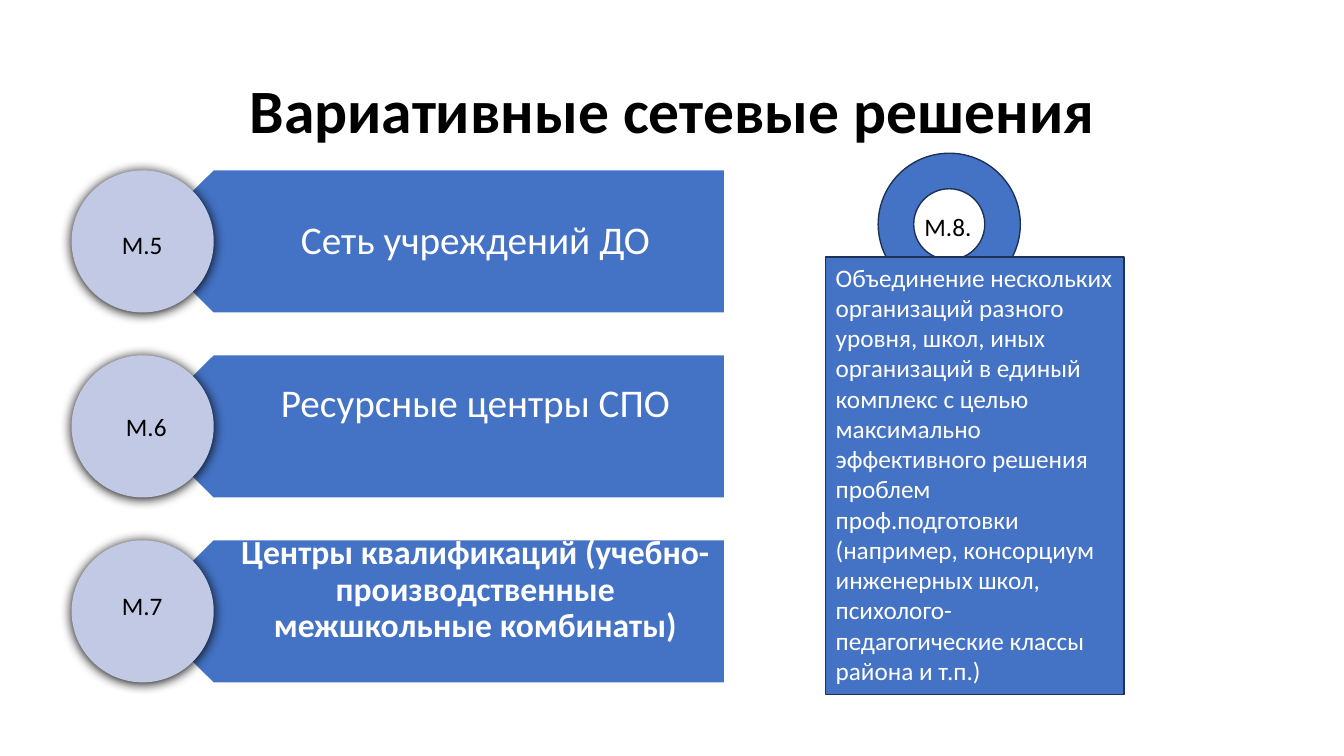
from lxml.etree import SubElement
from pptx import Presentation
from pptx.dml.color import RGBColor
from pptx.enum.shapes import MSO_SHAPE
from pptx.enum.text import MSO_ANCHOR, MSO_AUTO_SIZE, PP_ALIGN
from pptx.oxml.ns import qn
from pptx.util import Inches, Pt

COLORS = {
    "blue": "4472C4",
    "navy": "1E3256",
    "lavender": "C1C9E4",
    "white": "FFFFFF",
    "black": "000000",
}
FONT = "Calibri"
CIRCLE = 1.41
ROW_STEP = 1.835


def rgb(name):
    return RGBColor.from_string(COLORS[name])


class NetworkSlide:
    def __init__(self, presentation):
        self.slide = presentation.slides.add_slide(presentation.slide_layouts[5])
        self.shapes = self.slide.shapes

    def add_text(self, frame, text, size, color, bold=False, align=PP_ALIGN.LEFT, spacing=1.0):
        paragraph = frame.paragraphs[0]
        paragraph.alignment = align
        paragraph.line_spacing = spacing
        run = paragraph.add_run()
        run.text = text
        run.font.name = FONT
        run.font.size = Pt(size)
        run.font.bold = bold
        run.font.color.rgb = rgb(color)

    def paint(self, shape, fill, line=None):
        shape.shadow.inherit = False
        shape.fill.solid()
        shape.fill.fore_color.rgb = rgb(fill)
        if line:
            shape.line.color.rgb = rgb(line)
            shape.line.width = Pt(1)
        else:
            shape.line.fill.background()

    def title(self, text):
        heading = self.shapes.title
        heading.left, heading.top = Inches(0.92), Inches(0.4)
        heading.width, heading.height = Inches(11.5), Inches(1.45)
        heading.text_frame.vertical_anchor = MSO_ANCHOR.MIDDLE
        self.add_text(heading.text_frame, text, 44, "black", True, PP_ALIGN.CENTER, 0.9)

    def shape(self, kind, left, top, width, height, fill, line=None):
        shape = self.shapes.add_shape(
            kind, Inches(left), Inches(top), Inches(width), Inches(height))
        self.paint(shape, fill, line)
        return shape

    def banner(self, top, text, size, bold, bottom_inset):
        """Bar whose left end is a point hidden behind the circle."""
        tip, shoulder, right = 1.41, 2.12, 7.18
        bottom = top + CIRCLE
        outline = [(shoulder, bottom), (tip, top + CIRCLE / 2), (shoulder, top), (right, top)]
        builder = self.shapes.build_freeform(Inches(right), Inches(bottom))
        builder.add_line_segments([(Inches(x), Inches(y)) for x, y in outline], close=True)
        bar = builder.convert_to_shape()
        self.paint(bar, "blue")
        frame = bar.text_frame
        frame.word_wrap = True
        frame.vertical_anchor = MSO_ANCHOR.MIDDLE
        frame.margin_left, frame.margin_right = Inches(0.98), Inches(0.14)
        frame.margin_top, frame.margin_bottom = 0, Inches(bottom_inset)
        self.add_text(frame, text, size, "white", bold, PP_ALIGN.CENTER, 0.9)

    def circle(self, top):
        disc = self.shape(MSO_SHAPE.OVAL, 0.71, top, CIRCLE, CIRCLE, "lavender")
        effects = disc.element.spPr.find(qn("a:effectLst"))
        shadow = SubElement(effects, qn("a:outerShdw"), blurRad=str(Pt(8.5)),
                            dist=str(Pt(1)), dir="5400000", algn="ctr", rotWithShape="0")
        SubElement(shadow, qn("a:srgbClr"), val=COLORS["black"])

    def label(self, left, top, width, text):
        box = self.shapes.add_textbox(Inches(left), Inches(top), Inches(width), Inches(0.4))
        box.text_frame.word_wrap = True
        box.text_frame.auto_size = MSO_AUTO_SIZE.SHAPE_TO_FIT_TEXT
        self.add_text(box.text_frame, text, 18, "black")

    def panel(self, text):
        card = self.shape(MSO_SHAPE.RECTANGLE, 8.19, 2.55, 2.96, 4.34, "blue", "navy")
        frame = card.text_frame
        frame.word_wrap = True
        frame.auto_size = MSO_AUTO_SIZE.SHAPE_TO_FIT_TEXT
        frame.vertical_anchor = MSO_ANCHOR.TOP
        self.add_text(frame, text, 18, "white")


def main():
    presentation = Presentation()
    presentation.slide_width, presentation.slide_height = Inches(13.33), Inches(7.5)
    page = NetworkSlide(presentation)
    page.title("Вариативные сетевые решения")

    models = [
        ("Сеть учреждений ДО", 28, False, 0),
        ("Ресурсные центры СПО", 28, False, 0.42),
        ("Центры квалификаций (учебно-производственные межшкольные комбинаты)", 24, True, 0.42),
    ]
    for row, model in enumerate(models):
        top = 1.69 + row * ROW_STEP
        page.banner(top, *model)
        page.circle(top)

    page.shape(MSO_SHAPE.DONUT, 8.71, 1.52, CIRCLE, CIRCLE, "blue", "navy")
    page.panel(
        "Объединение нескольких организаций разного уровня, школ, иных организаций "
        "в единый комплекс с целью максимально эффективного решения проблем "
        "проф.подготовки (например, консорциум инженерных школ, "
        "психолого-педагогические классы района и т.п.)")

    for left, top, width, code in [
        (1.11, 2.23, 0.61, "М.5"),
        (1.15, 4.03, 0.61, "М.6"),
        (1.11, 5.81, 0.61, "М.7"),
        (9.07, 2.05, 0.87, "М.8."),
    ]:
        page.label(left, top, width, code)

    presentation.save("out.pptx")


if __name__ == "__main__":
    main()
